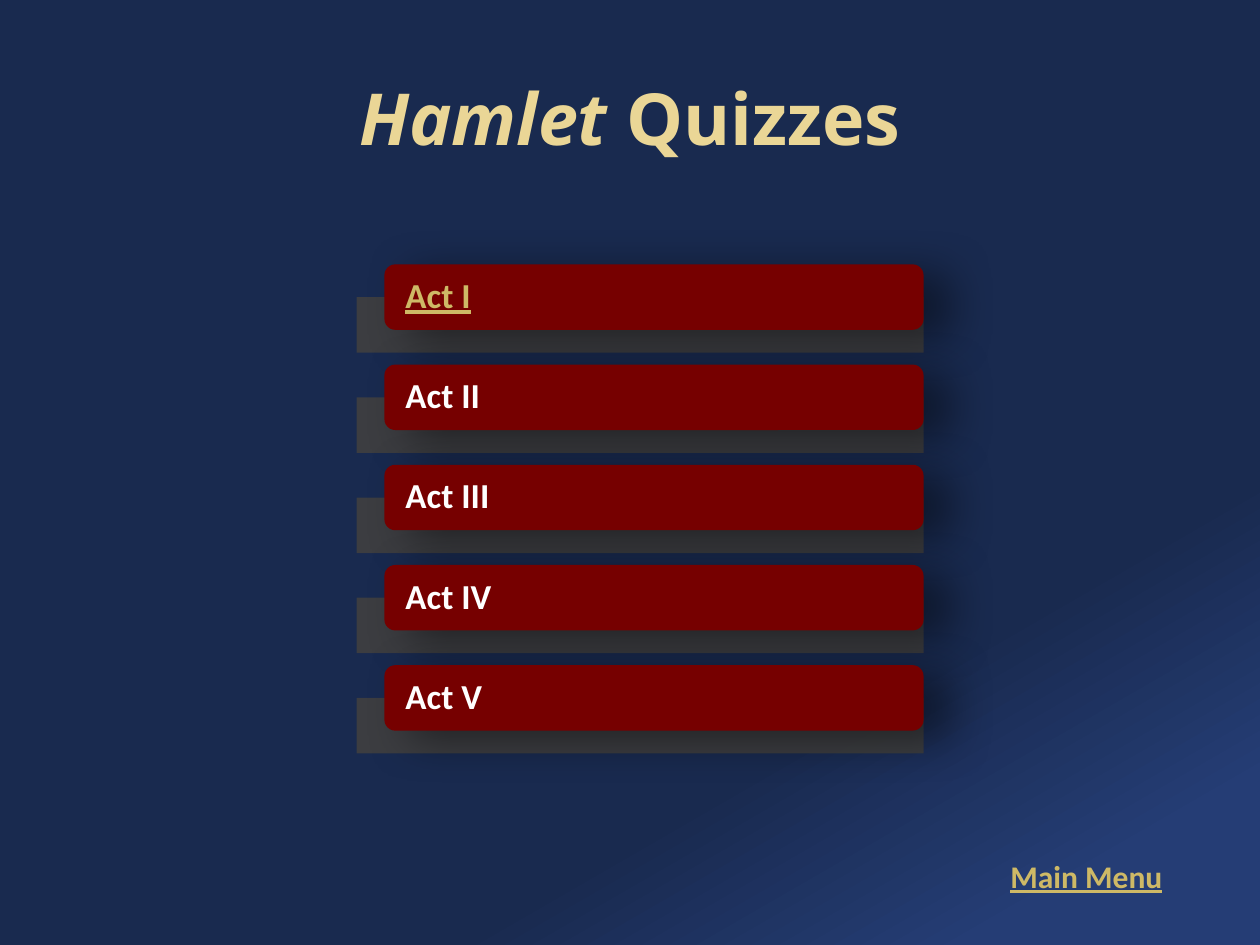
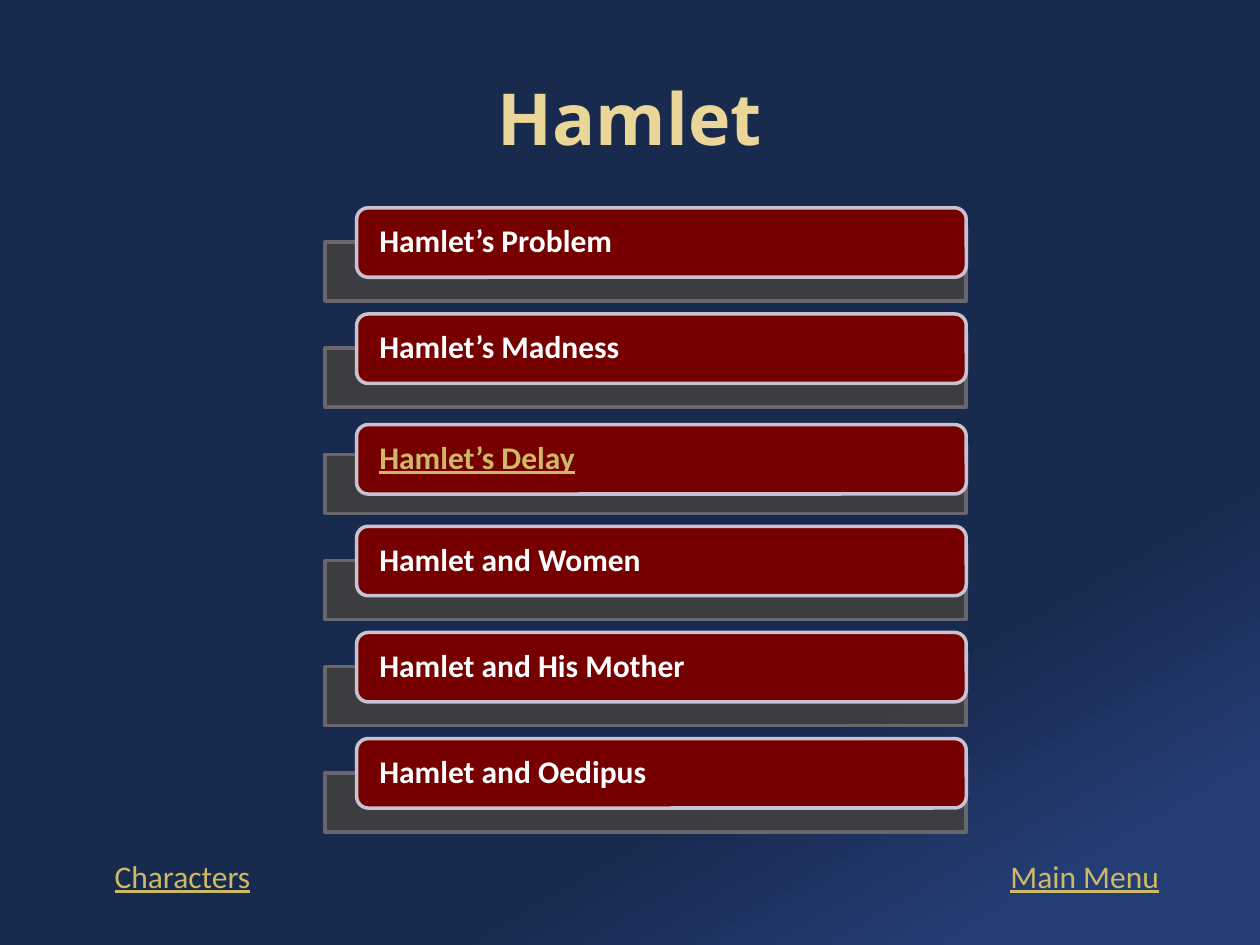
from lxml.etree import SubElement
from pptx import Presentation
from pptx.dml.color import RGBColor
from pptx.enum.shapes import MSO_SHAPE
from pptx.enum.text import MSO_ANCHOR, PP_ALIGN
from pptx.oxml.ns import qn
from pptx.util import Cm, Pt

NAVY = RGBColor(0x19, 0x2A, 0x4F)
BLUE = RGBColor(0x25, 0x3D, 0x75)
CREAM = RGBColor(0xEA, 0xD6, 0x96)
GOLD = RGBColor(0xCE, 0xB9, 0x66)
WHITE = RGBColor(0xFF, 0xFF, 0xFF)
RED = RGBColor(0x76, 0x00, 0x00)
GRAY = RGBColor(0x40, 0x40, 0x40)
DIM = RGBColor(0x69, 0x67, 0x6D)
PALE = RGBColor(0xC9, 0xC2, 0xD1)

# Menu lengths are in cm: the bar sits "drop" below its card
# and starts "indent" to the left of it; both end at the same right edge.
PAGES = [
    dict(
        title=[("Hamlet ", True), ("Quizzes", False)],
        items=["Act I", "Act II", "Act III", "Act IV", "Act V"],
        link="Act I",
        menu=dict(left=7.75, top=5.33, width=10.87, height=1.32, pitch=2.02,
                  indent=0.56, drop=0.66, bar=1.12, inset=0.36, size=20,
                  lined=False, nudge={}),
        foot=[("Main Menu", 20.12, True)],
    ),
    dict(
        title=[("Hamlet", False)],
        items=["Hamlet’s Problem", "Hamlet’s Madness", "Hamlet’s Delay",
               "Hamlet and Women", "Hamlet and His Mother",
               "Hamlet and Oedipus"],
        link="Hamlet’s Delay",
        menu=dict(left=7.19, top=4.19, width=12.29, height=1.4, pitch=2.14,
                  indent=0.64, drop=0.69, bar=1.19, inset=0.39, size=18,
                  lined=True, nudge={2: 0.09}),
        foot=[("Main Menu", 20.12, False), ("Characters", 2.06, False)],
    ),
]


def write(frame, runs, font="Calibri", size=18, color=WHITE, bold=True,
          under=False, align=PP_ALIGN.LEFT, anchor=MSO_ANCHOR.TOP,
          space=None):
    """Fill the frame's first paragraph with (text, italic) runs."""
    frame.vertical_anchor = anchor
    para = frame.paragraphs[0]
    para.alignment = align
    para.line_spacing = space
    for text, slant in runs:
        run = para.add_run()
        run.text = text
        face = run.font
        face.name, face.size = font, Pt(size)
        face.bold, face.italic, face.underline = bold, slant, under
        face.color.rgb = color


def block(slide, kind, left, top, width, height, fill, edge=None):
    shape = slide.shapes.add_shape(
        kind, Cm(left), Cm(top), Cm(width), Cm(height))
    shape.shadow.inherit = False
    shape.fill.solid()
    shape.fill.fore_color.rgb = fill
    if edge:
        shape.line.color.rgb = edge
        shape.line.width = Pt(2)
    else:
        shape.line.fill.background()
    return shape


def fade(node, percent):
    """Set the opacity of a colour element."""
    SubElement(node, qn("a:alpha"), val=str(percent * 1000))


def shade(shape):
    """Give the shape a soft black shadow to its lower right."""
    effects = shape._element.spPr.find(qn("a:effectLst"))
    outer = SubElement(effects, qn("a:outerShdw"), blurRad=str(Pt(26)),
                       dist=str(Pt(15)), dir=str(18 * 60000),
                       algn="tl", rotWithShape="0")
    fade(SubElement(outer, qn("a:srgbClr"), val="000000"), 45)


def add_menu(slide, items, link, left, top, width, height, pitch, indent,
             drop, bar, inset, size, lined, nudge):
    for i, item in enumerate(items):
        y = top + i * pitch
        base = block(slide, MSO_SHAPE.RECTANGLE, left - indent, y + drop,
                     width + indent, bar, GRAY, DIM if lined else None)
        fade(base._element.spPr.find(
            f"{qn('a:solidFill')}/{qn('a:srgbClr')}"), 90)

        card = block(slide, MSO_SHAPE.ROUNDED_RECTANGLE, left,
                     y + nudge.get(i, 0), width, height, RED,
                     PALE if lined else None)
        if not lined:
            shade(card)
        frame = card.text_frame
        frame.margin_left = frame.margin_right = Cm(inset)
        frame.margin_top = frame.margin_bottom = 0
        linked = item == link
        write(frame, [(item, False)], size=size, under=linked,
              color=GOLD if linked else WHITE,
              anchor=MSO_ANCHOR.MIDDLE, space=0.9)


def add_foot(slide, text, left, bold):
    box = slide.shapes.add_textbox(Cm(left), Cm(17.15), Cm(3.58), Cm(1.02))
    write(box.text_frame, [(text, False)], color=GOLD, bold=bold, under=True)


def set_theme(deck, layout):
    """Set the shared background and the place of the title."""
    fill = deck.slide_master.background.fill
    fill.gradient()
    fill.gradient_angle = 300
    stops = zip(fill.gradient_stops, [(0.72, NAVY), (0.9, BLUE)])
    for stop, (place, color) in stops:
        stop.position = place
        stop.color.rgb = color
    title = layout.placeholders[0]
    title.left, title.top = Cm(1.27), Cm(0.76)
    title.width, title.height = Cm(22.86), Cm(3.18)


def main():
    deck = Presentation()
    deck.slide_width, deck.slide_height = Cm(25.4), Cm(19.05)
    layout = deck.slide_layouts.get_by_name("Title Only")
    set_theme(deck, layout)
    for page in PAGES:
        slide = deck.slides.add_slide(layout)
        write(slide.shapes.title.text_frame, page["title"],
              font="Open Sans", size=41, color=CREAM,
              align=PP_ALIGN.CENTER, anchor=MSO_ANCHOR.MIDDLE)
        add_menu(slide, page["items"], page["link"], **page["menu"])
        for foot in page["foot"]:
            add_foot(slide, *foot)
    deck.save("out.pptx")


if __name__ == "__main__":
    main()
